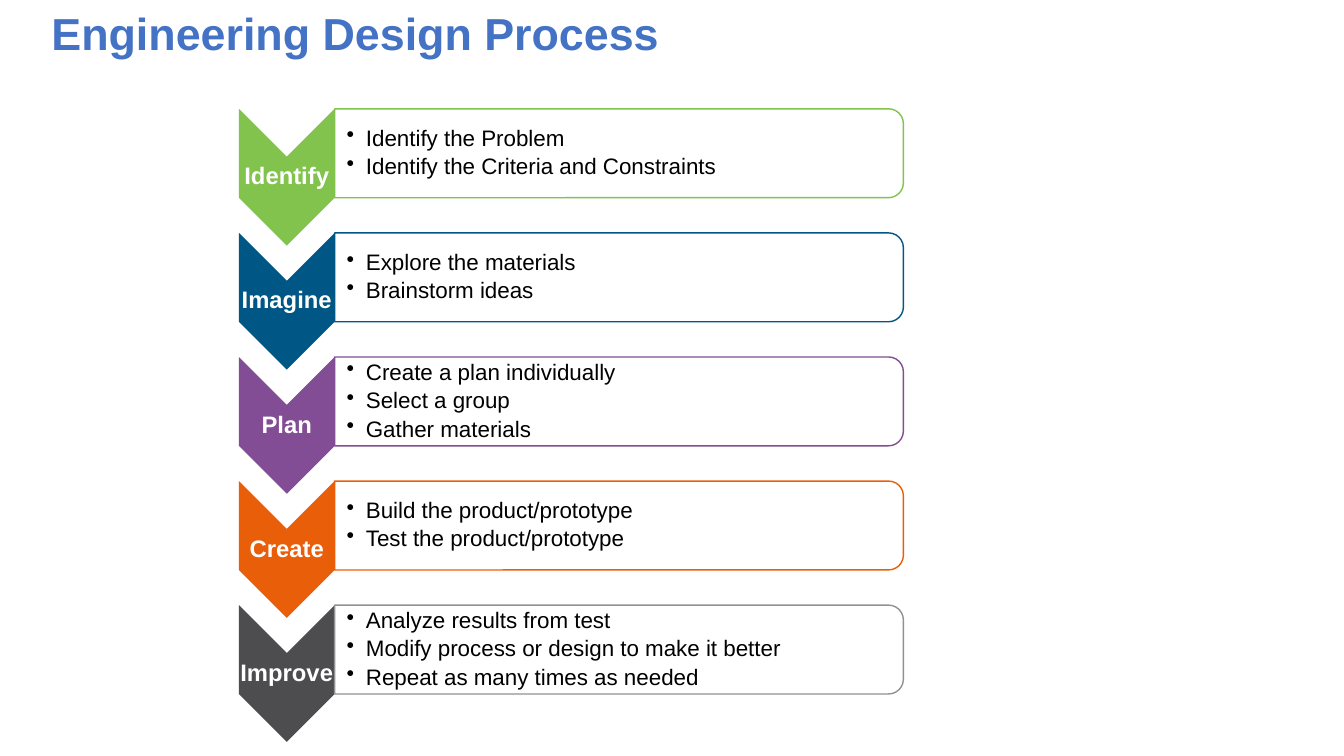
from dataclasses import dataclass

import pptx
import pptx.dml.color
import pptx.enum.shapes
import pptx.enum.text
import pptx.oxml
import pptx.oxml.ns
import pptx.util

SHAPE = pptx.enum.shapes.MSO_SHAPE
ANCHOR = pptx.enum.text.MSO_ANCHOR
ALIGN = pptx.enum.text.PP_ALIGN


class Theme:
    font = "Arial"
    title_size, label_size, bullet_size = 32, 17, 16
    title, label, body, panel = "4472C4", "FFFFFF", "000000", "FFFFFF"
    line_spacing = 0.9
    bullet_indent = 0.19


@dataclass
class Box:
    """A rectangle in inches."""
    left: float
    top: float
    width: float
    height: float

    def inner(self, left, top, width, height):
        """Return an inner box given as shares of this one."""
        return Box(self.left + left * self.width, self.top + top * self.height,
                   width * self.width, height * self.height)

    def turned(self):
        """Return the frame that covers this box once rotated by 90 degrees."""
        return Box(self.left + (self.width - self.height) / 2,
                   self.top + (self.height - self.width) / 2,
                   self.height, self.width)

    def emu(self):
        return [pptx.util.Inches(length) for length in
                (self.left, self.top, self.width, self.height)]


SLIDE = Box(0, 0, 13.33, 7.5)

# label, chevron colour, outline colour, bullets
STEPS = [
    ("Identify", "82C34D", "82C34D",
     ["Identify the Problem", "Identify the Criteria and Constraints"]),
    ("Imagine", "005786", "005786",
     ["Explore the materials", "Brainstorm ideas"]),
    ("Plan", "824D94", "824D94",
     ["Create a plan individually", "Select a group", "Gather materials"]),
    ("Create", "E95E09", "E95E09",
     ["Build the product/prototype", "Test the product/prototype"]),
    ("Improve", "4D4D4F", "919191",
     ["Analyze results from test", "Modify process or design to make it better",
      "Repeat as many times as needed"]),
]


def rgb(value):
    return pptx.dml.color.RGBColor.from_string(value)


def style(para, size, color, bold=False):
    para.line_spacing = Theme.line_spacing
    para.font.name = Theme.font
    para.font.size = pptx.util.Pt(size)
    para.font.bold = bold
    para.font.color.rgb = rgb(color)


def add_bullet(para):
    properties = para._p.get_or_add_pPr()
    indent = pptx.util.Inches(Theme.bullet_indent)
    properties.set("marL", str(indent))
    properties.set("indent", str(-indent))
    bullet = pptx.oxml.parse_xml(
        f'<a:buChar {pptx.oxml.ns.nsdecls("a")} char="•"/>')
    properties.append(bullet)


def add_turned_shape(shapes, preset, box, fill, line=None):
    shape = shapes.add_shape(preset, *box.turned().emu())
    shape.rotation = 90
    shape.shadow.inherit = False
    shape.fill.solid()
    shape.fill.fore_color.rgb = rgb(fill)
    if line:
        shape.line.color.rgb = rgb(line)
        shape.line.width = pptx.util.Pt(1)
    else:
        shape.line.fill.background()


def add_text(shapes, box, lines, left_inset=0.01, wrap=True):
    frame = shapes.add_textbox(*box.emu()).text_frame
    frame.word_wrap = wrap
    frame.vertical_anchor = ANCHOR.MIDDLE
    frame.margin_left = pptx.util.Inches(left_inset)
    frame.margin_top = frame.margin_right = frame.margin_bottom = pptx.util.Inches(0.01)
    frame.text = "\n".join(lines)
    return frame.paragraphs


def add_title(page, box, text):
    title = page.shapes.title
    title.left, title.top, title.width, title.height = box.emu()
    frame = title.text_frame
    frame.text = text
    frame.auto_size = pptx.enum.text.MSO_AUTO_SIZE.NONE
    frame.vertical_anchor = ANCHOR.TOP
    frame.margin_top = pptx.util.Inches(0.22)
    para = frame.paragraphs[0]
    para.alignment = ALIGN.LEFT
    style(para, Theme.title_size, Theme.title, bold=True)


def add_step(shapes, box, label, color, outline, bullets):
    """Draw a down chevron with its label, and the bullet panel beside it."""
    chevron = box.inner(0, 0, 0.144, 1)
    add_turned_shape(shapes, SHAPE.CHEVRON, chevron, color)
    para = add_text(shapes, chevron.inner(0, 0.35, 1, 0.3), [label], wrap=False)[0]
    para.alignment = ALIGN.CENTER
    style(para, Theme.label_size, Theme.label, bold=True)

    panel = box.inner(0.144, 0, 0.856, 0.65)
    add_turned_shape(shapes, SHAPE.ROUND_2_SAME_RECTANGLE, panel, Theme.panel, outline)
    for para in add_text(shapes, panel.inner(0, 0.05, 0.99, 0.9), bullets, 0.12):
        add_bullet(para)
        para.space_after = pptx.util.Pt(3)
        style(para, Theme.bullet_size, Theme.body)


def add_process(page, box, steps):
    shapes = page.shapes.add_group_shape().shapes
    row_height = 0.216
    pitch = (1 - row_height) / (len(steps) - 1)
    for row, step in enumerate(steps):
        add_step(shapes, box.inner(0, row * pitch, 1, row_height), *step)


def main():
    deck = pptx.Presentation()
    deck.slide_width, deck.slide_height = SLIDE.emu()[2:]
    page = deck.slides.add_slide(deck.slide_layouts.get_by_name("Title Only"))
    add_title(page, Box(0.41, -0.1, 9.7, 1.45), "Engineering Design Process")
    add_process(page, Box(2.37, 1.08, 6.59, 6.28), STEPS)
    deck.save("out.pptx")


if __name__ == "__main__":
    main()
